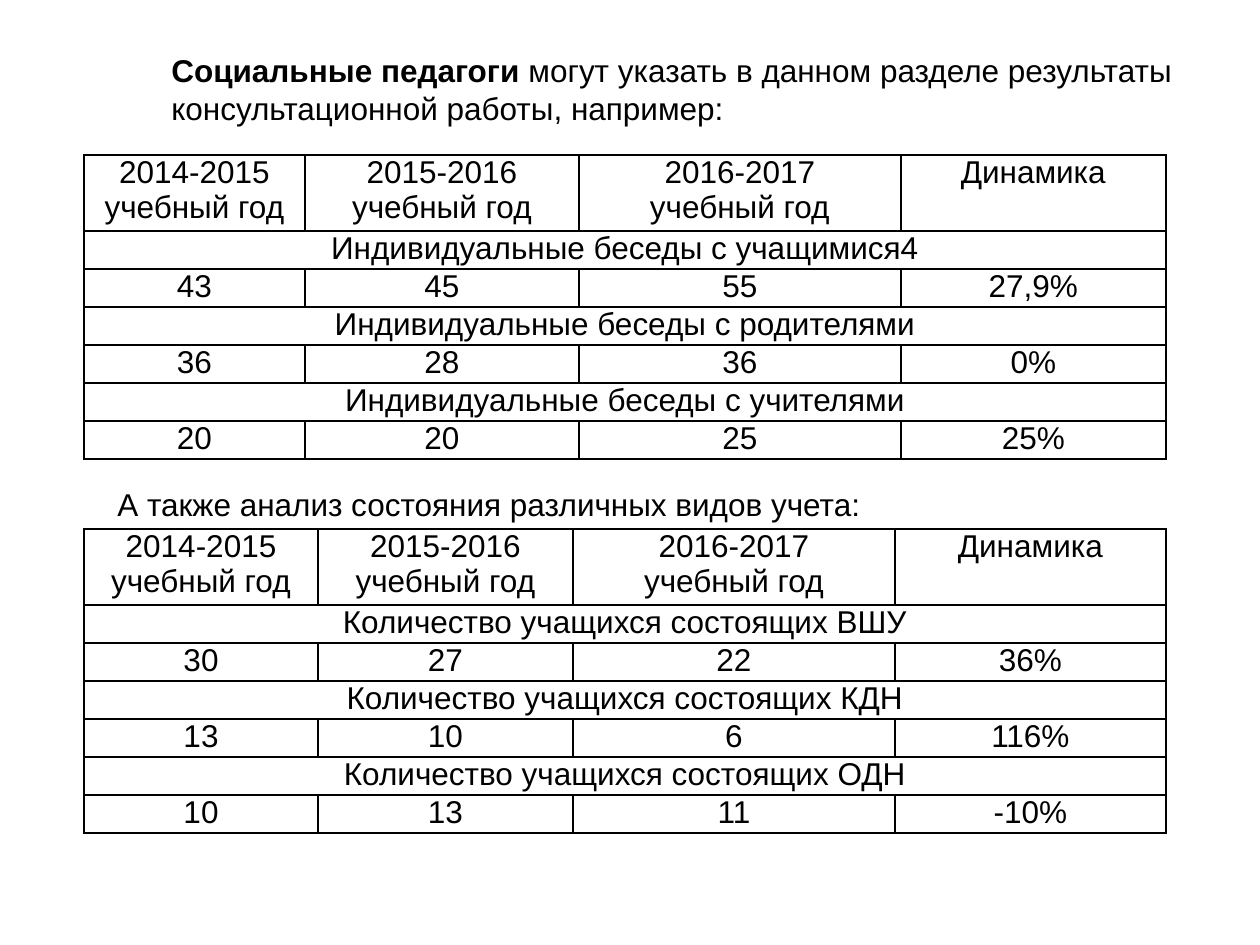
from lxml import etree
from pptx import Presentation
from pptx import util as u
from pptx.dml.color import RGBColor
from pptx.enum import text
from pptx.oxml.ns import qn

PX = 914400 // 126
COLORS = {"ink": "000000"}
INK = RGBColor.from_string(COLORS["ink"])
ROW_HEIGHT = 38
HEADER = ["2014-2015 учебный год", "2015-2016 учебный год",
          "2016-2017\nучебный год", "Динамика"]


def style(paragraph):
    paragraph.font.size = u.Pt(18)
    paragraph.font.name = "Arial"
    paragraph.font.color.rgb = INK


def add_borders(cell):
    properties = cell._tc.get_or_add_tcPr()
    for index, side in enumerate(("lnL", "lnR", "lnT", "lnB")):
        line = etree.Element(qn(f"a:{side}"), w=str(u.Pt(1)))
        fill = etree.SubElement(line, qn("a:solidFill"))
        etree.SubElement(fill, qn("a:srgbClr"), val=COLORS["ink"])
        properties.insert(index, line)


deck = Presentation()
deck.slide_width, deck.slide_height = u.Inches(10), u.Inches(7.5)
page = deck.slides.add_slide(deck.slide_layouts[6])

# Introductory lines: position, then (wording, bold) spans
intros = [
    ((159, 45, 1101, 89),
     [("Социальные педагоги ", True),
      ("могут указать в данном разделе результаты консультационной работы, например:", False)]),
    ((105, 479, 801, 50),
     [("А также анализ состояния различных видов учета:", False)]),
]
for position, spans in intros:
    box = page.shapes.add_textbox(*(n * PX for n in position))
    box.text_frame.word_wrap = True
    para = box.text_frame.paragraphs[0]
    style(para)
    for wording, bold in spans:
        span = para.add_run()
        span.text = wording
        span.font.bold = bold

# Tables: top, column widths, then a section title and its values
tables = [
    (155, [221, 274, 322, 265], [
        ("Индивидуальные беседы с учащимися4", ["43", "45", "55", "27,9%"]),
        ("Индивидуальные беседы с родителями", ["36", "28", "36", "0%"]),
        ("Индивидуальные беседы с учителями", ["20", "20", "25", "25%"])]),
    (529, [234, 255, 322, 271], [
        ("Количество учащихся состоящих ВШУ", ["30", "27", "22", "36%"]),
        ("Количество учащихся состоящих КДН", ["13", "10", "6", "116%"]),
        ("Количество учащихся состоящих ОДН", ["10", "13", "11", "-10%"])]),
]
for top, widths, sections in tables:
    rows = [HEADER]
    for title, values in sections:
        rows += [[title], values]
    table = page.shapes.add_table(
        len(rows), len(widths), 84 * PX, top * PX,
        sum(widths) * PX, (len(rows) + 1) * ROW_HEIGHT * PX).table
    table.first_row = table.horz_banding = False
    for column, width in zip(table.columns, widths):
        column.width = width * PX
    for index, row in enumerate(rows):
        # The header holds two lines
        table.rows[index].height = ROW_HEIGHT * PX * (2 if index == 0 else 1)
        if len(row) == 1:
            table.cell(index, 0).merge(table.cell(index, len(widths) - 1))
        for cell in table.rows[index].cells:
            cell.margin_left = cell.margin_right = 9 * PX
            cell.margin_top = cell.margin_bottom = 0
            cell.fill.background()
            add_borders(cell)
        for column, wording in enumerate(row):
            cell = table.cell(index, column)
            cell.text = wording
            for para in cell.text_frame.paragraphs:
                para.alignment = text.PP_ALIGN.CENTER
                style(para)

deck.save("out.pptx")
